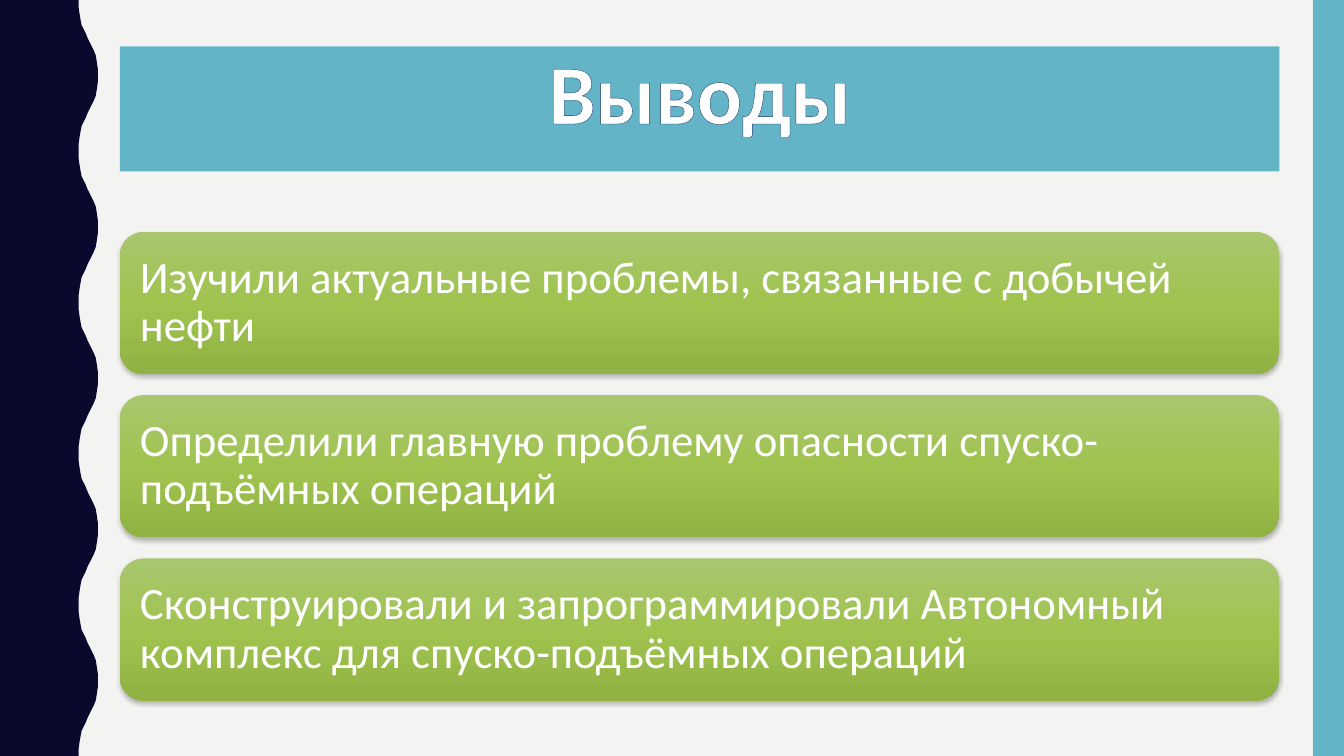
from lxml import etree
from pptx import Presentation, util as u
from pptx.dml.color import RGBColor
from pptx.enum import shapes, text
from pptx.oxml.ns import qn

COLORS = {
    "background": "F3F3F2", "wave": "0B082E", "accent": "62B4C6",
    "text": "FFFFFF", "outline": "1B376E", "shadow": "000000",
    "card_top": "A9C66E", "card_middle": "A0C350", "card_bottom": "90B242",
}
FONT = "Calibri"
TITLE = "Выводы"
CONCLUSIONS = [
    "Изучили актуальные проблемы, связанные с добычей нефти",
    "Определили главную проблему опасности спуско-подъёмных операций",
    "Сконструировали и запрограммировали Автономный комплекс для спуско-подъёмных операций",
]
WAVE_PERIOD = 1.5
# Half a wave from trough to crest: distance from the left edge, distance down
HALF_WAVE = [
    (0.78, 0), (0.78, 0.07), (0.79, 0.14), (0.8, 0.2), (0.81, 0.25),
    (0.83, 0.29), (0.85, 0.33), (0.87, 0.38), (0.89, 0.42), (0.91, 0.46),
    (0.93, 0.5), (0.95, 0.55), (0.96, 0.61), (0.97, 0.68), (0.97, 0.75),
]


def rgb(name):
    return RGBColor.from_string(COLORS[name])


def add_color(parent, name, alpha=None):
    clr = etree.SubElement(parent, qn("a:srgbClr"), val=COLORS[name])
    if alpha is not None:
        etree.SubElement(clr, qn("a:alpha"), val=str(alpha * 1000))


def paint(sp, color):
    sp.shadow.inherit = False
    sp.fill.solid()
    sp.fill.fore_color.rgb = rgb(color)
    sp.line.fill.background()


def write(sp, content, size, bold=False, align=text.PP_ALIGN.LEFT,
          anchor=text.MSO_ANCHOR.MIDDLE, inset=None):
    tf = sp.text_frame
    tf.word_wrap = True
    tf.auto_size = text.MSO_AUTO_SIZE.NONE
    tf.vertical_anchor = anchor
    if inset is not None:
        tf.margin_left = tf.margin_right = u.Inches(inset)
        tf.margin_top = tf.margin_bottom = u.Inches(inset)
    p = tf.paragraphs[0]
    p.alignment = align
    p.line_spacing = 0.9
    r = p.add_run()
    r.text = content
    r.font.name = FONT
    r.font.size = u.Pt(size)
    r.font.bold = bold
    r.font.color.rgb = rgb("text")
    return r


def add_wave(s, left, top, height):
    cycle = HALF_WAVE[:-1] + [(x, WAVE_PERIOD - y) for x, y in HALF_WAVE[:0:-1]]
    edge = [(left + x, top + i * WAVE_PERIOD + y)
            for i in range(round(height / WAVE_PERIOD)) for x, y in cycle]
    edge += [(left + HALF_WAVE[0][0], top + height), (left, top + height)]
    builder = s.shapes.build_freeform(u.Inches(left), u.Inches(top))
    builder.add_line_segments([(u.Inches(x), u.Inches(y)) for x, y in edge])
    paint(builder.convert_to_shape(), "wave")


def add_side_bar(s, *box):
    bar = s.shapes.add_shape(shapes.MSO_SHAPE.RECTANGLE, *map(u.Inches, box))
    paint(bar, "accent")


def add_title(s, *box):
    title = s.shapes.title
    title.left, title.top, title.width, title.height = map(u.Inches, box)
    title.fill.solid()
    title.fill.fore_color.rgb = rgb("accent")
    r = write(title, TITLE, 60, bold=True, align=text.PP_ALIGN.CENTER,
              anchor=text.MSO_ANCHOR.TOP)
    ln = etree.Element(qn("a:ln"), w=str(u.Pt(0.52)))
    add_color(etree.SubElement(ln, qn("a:solidFill")), "outline")
    r.font._element.insert(0, ln)


def style_card(card):
    """Give the card its three-stop gradient and soft shadow."""
    card.line.fill.background()
    card.fill.gradient()
    card.fill.gradient_angle = 270
    stops = card._element.spPr.find(qn("a:gradFill")).find(qn("a:gsLst"))
    for stop in list(stops):
        stops.remove(stop)
    for pos, name in ((0, "card_top"), (50, "card_middle"), (100, "card_bottom")):
        add_color(etree.SubElement(stops, qn("a:gs"), pos=str(pos * 1000)), name)
    card.shadow.inherit = False
    effects = card._element.spPr.find(qn("a:effectLst"))
    shadow = etree.SubElement(effects, qn("a:outerShdw"), blurRad=str(u.Pt(3)),
                              dist=str(u.Pt(2)), dir="5400000", rotWithShape="0")
    add_color(shadow, "shadow", alpha=25)


def add_conclusions(s, left, top, width, height, gap=0.21):
    count = len(CONCLUSIONS)
    card_height = (height - gap * (count - 1)) / count
    for i, conclusion in enumerate(CONCLUSIONS):
        box = left, top + i * (card_height + gap), width, card_height
        card = s.shapes.add_shape(shapes.MSO_SHAPE.ROUNDED_RECTANGLE,
                                  *map(u.Inches, box))
        style_card(card)
        write(card, conclusion, 32, inset=0.13)


def main():
    prs = Presentation()
    prs.slide_width, prs.slide_height = u.Inches(13.33), u.Inches(7.5)
    s = prs.slides.add_slide(prs.slide_layouts[5])
    s.background.fill.solid()
    s.background.fill.fore_color.rgb = rgb("background")
    add_wave(s, 0, 0, 7.5)
    add_side_bar(s, 13.02, 0, 0.31, 7.5)
    add_title(s, 1.19, 0.46, 11.5, 1.24)
    add_conclusions(s, 1.19, 2.3, 11.5, 4.65)
    prs.save("out.pptx")


if __name__ == "__main__":
    main()
